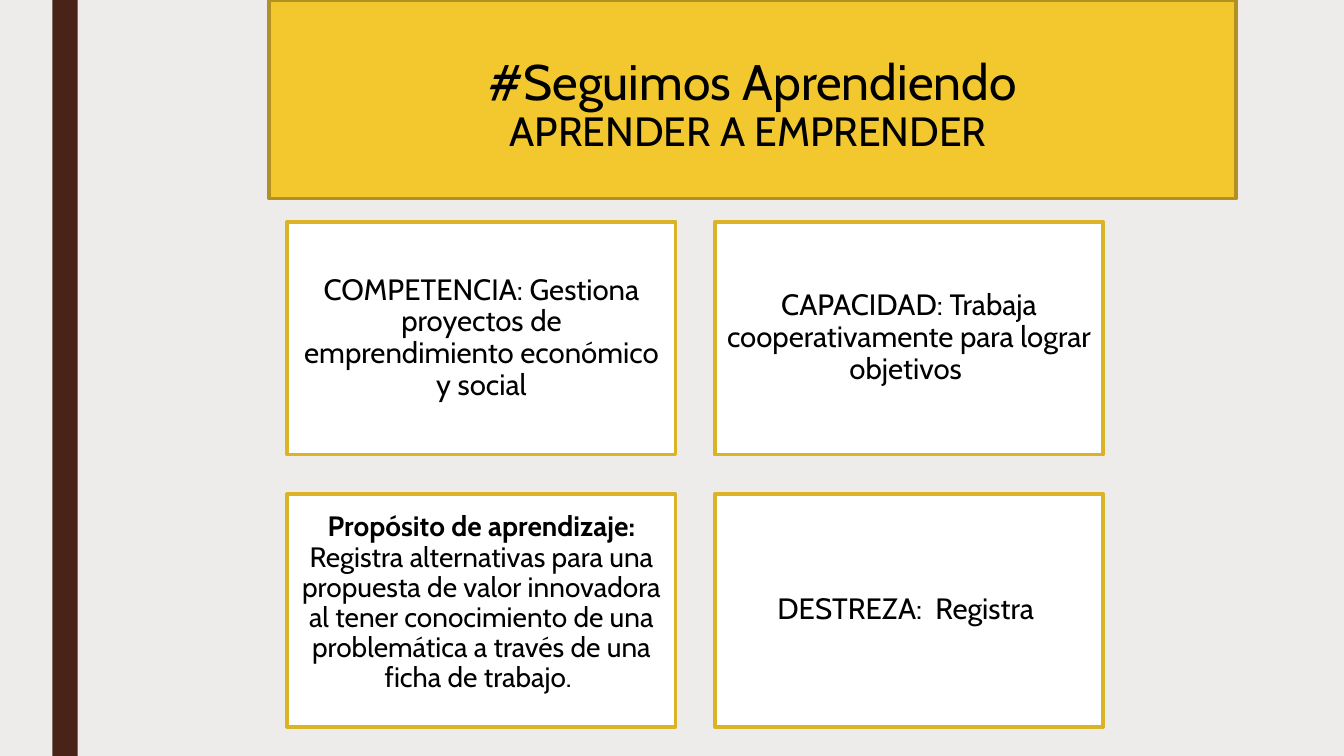
from pptx import Presentation
from pptx.dml.color import RGBColor
from pptx.enum.shapes import MSO_SHAPE
from pptx.enum.text import MSO_ANCHOR, PP_ALIGN
from pptx.util import Inches, Pt

RECTANGLE = MSO_SHAPE.RECTANGLE
TOP, MIDDLE = MSO_ANCHOR.TOP, MSO_ANCHOR.MIDDLE
CENTER = PP_ALIGN.CENTER

# Content: each run is (text, size name, bold)
TITLE = [
    ("#Seguimos Aprendiendo\v", "title", False),
    ("APRENDER A EMPRENDER ", "subtitle", False),
]
# Each card is (runs, bottom inset in inches)
CARDS = [
    ([("COMPETENCIA: Gestiona proyectos de emprendimiento económico y social", "card", False)], 0.09),
    ([("CAPACIDAD: Trabaja cooperativamente para lograr objetivos ", "card", False)], 0.09),
    ([("Propósito de aprendizaje: ", "purpose", True),
      ("Registra alternativas para una propuesta de valor innovadora al tener "
       "conocimiento de una problemática a través de una ficha de trabajo. ", "purpose", False)], 0.23),
    ([("DESTREZA:  Registra ", "card", False)], 0.09),
]

THEME = {
    "font": "Cabin",
    "colors": {
        "background": "EDECEB", "stripe": "4A2318", "banner": "F3C82E",
        "banner_line": "B19121", "card": "FFFFFF", "card_line": "DAB327", "text": "000000",
    },
    "sizes": {"title": 35.6, "subtitle": 29.2, "card": 21, "purpose": 20},
    "line_width": 2.75,
}

# Layout in inches
SLIDE_WIDTH, SLIDE_HEIGHT = 13.33, 7.5
STRIPE = (0.52, 0, 0.25, SLIDE_HEIGHT)
BANNER = (2.67, 0, 9.59, 1.97)
GRID_LEFT, GRID_TOP, COLUMNS = 2.85, 2.2, 2
CARD_WIDTH, CARD_HEIGHT, GAP = 3.85, 2.31, 0.39


def color(name):
    return RGBColor.from_string(THEME["colors"][name])


def add_box(page, bounds, fill, line=None):
    box = page.shapes.add_shape(RECTANGLE, *(Inches(value) for value in bounds))
    box.shadow.inherit = False
    box.fill.solid()
    box.fill.fore_color.rgb = color(fill)
    if line:
        box.line.color.rgb = color(line)
        box.line.width = Pt(THEME["line_width"])
    else:
        box.line.fill.background()
    return box


def write(box, runs, insets, anchor, spacing):
    frame = box.text_frame
    frame.word_wrap = True
    frame.vertical_anchor = anchor
    (frame.margin_left, frame.margin_top,
     frame.margin_right, frame.margin_bottom) = (Inches(value) for value in insets)
    para = frame.paragraphs[0]
    para.alignment = CENTER
    para.line_spacing = spacing
    for text, size, bold in runs:
        span = para.add_run()
        span.text = text.rstrip("\v")
        span.font.name = THEME["font"]
        span.font.size = Pt(THEME["sizes"][size])
        span.font.bold = bold
        span.font.color.rgb = color("text")
        if text.endswith("\v"):
            para.add_line_break()


def main():
    deck = Presentation()
    deck.slide_width, deck.slide_height = Inches(SLIDE_WIDTH), Inches(SLIDE_HEIGHT)
    page = deck.slides.add_slide(deck.slide_layouts[6])
    page.background.fill.solid()
    page.background.fill.fore_color.rgb = color("background")

    # Side stripe and title banner
    add_box(page, STRIPE, "stripe")
    banner = add_box(page, BANNER, "banner", "banner_line")
    write(banner, TITLE, (0.1, 0.58, 0.1, 0.05), TOP, 0.89)

    # Grid of cards
    for index, (runs, bottom_inset) in enumerate(CARDS):
        row, column = divmod(index, COLUMNS)
        left = GRID_LEFT + column * (CARD_WIDTH + GAP)
        top = GRID_TOP + row * (CARD_HEIGHT + GAP)
        card = add_box(page, (left, top, CARD_WIDTH, CARD_HEIGHT), "card", "card_line")
        write(card, runs, (0.09, 0.09, 0.09, bottom_inset), MIDDLE, 0.9)

    deck.save("out.pptx")


if __name__ == "__main__":
    main()
